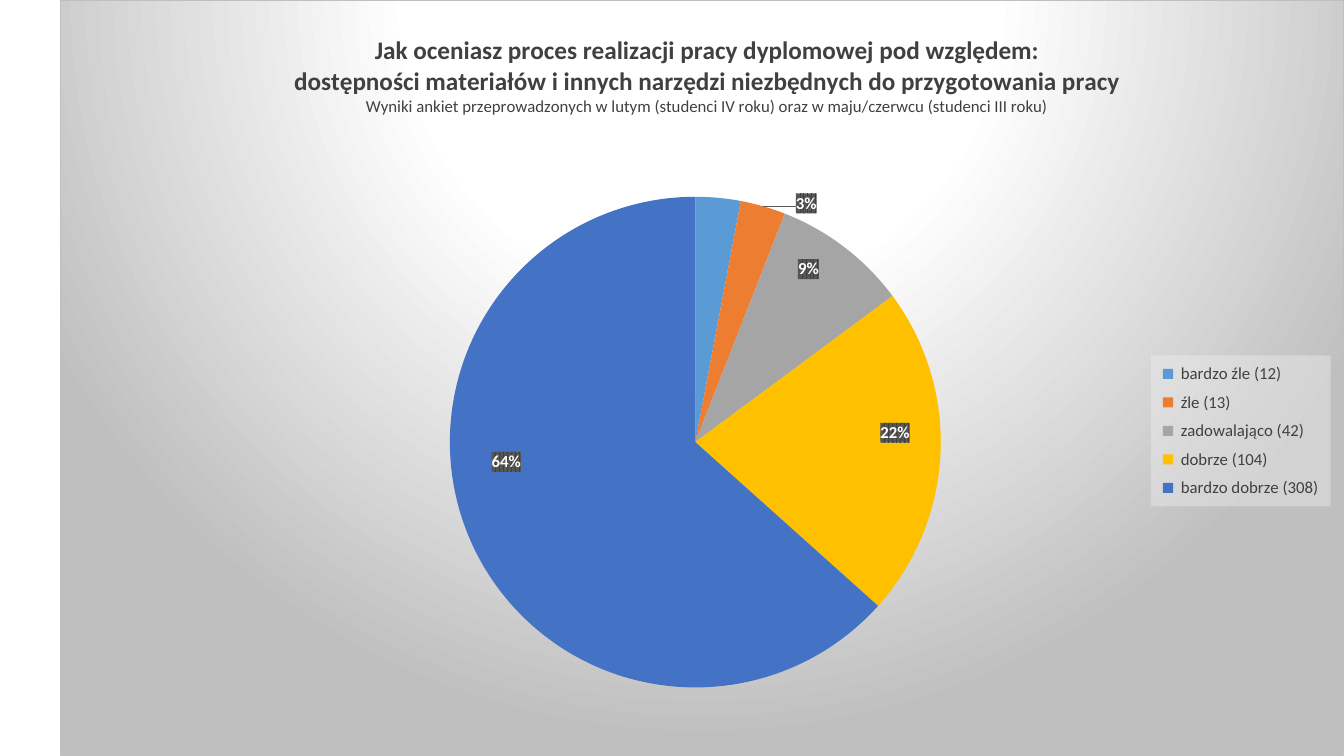
"""Build a slide with a pie chart of survey ratings on thesis work."""
from pptx import Presentation
from pptx import util as u
from pptx.chart import data as cd
from pptx.dml import color as dc
from pptx.enum import chart as ce
from pptx.oxml import parse_xml

TITLE = [
    ("Jak oceniasz proces realizacji pracy dyplomowej pod względem:", "head"),
    ("dostępności materiałów i innych narzędzi niezbędnych do przygotowania pracy", "head"),
    ("Wyniki ankiet przeprowadzonych w lutym (studenci IV roku) "
     "oraz w maju/czerwcu (studenci III roku)", "sub"),
]
RATINGS = [
    (" bardzo źle (12)", 3, "5B9BD5", None),
    (" źle (13)", 3, "ED7D31", (0.06, -0.16)),
    (" zadowalająco (42)", 9, "A5A5A5", (0.03, -0.1)),
    (" dobrze (104)", 22, "FFC000", (0.06, -0.02)),
    (" bardzo dobrze (308)", 64, "4472C4", (-0.06, -0.04)),
]
THEME = {
    "font": "Calibri", "ink": "404040", "edge": "BFBFBF", "light": "FFFFFF",
    "panel": "F2F2F2", "weave": "595959",
    "head": {"size": u.Pt(18), "bold": True},
    "sub": {"size": u.Pt(12), "bold": False},
    "label": {"size": u.Pt(12), "bold": True},
}
SLIDE = (u.Cm(33.87), u.Cm(19.05))
LEFT = u.Cm(1.5)
PLACES = {
    "title": {"x": 0.18, "y": 0.04},
    "plot": {"x": 0.3, "y": 0.26, "w": 0.39, "h": 0.65},
    "legend": {"x": 0.85, "y": 0.47, "w": 0.14, "h": 0.2},
}
NS = ('xmlns:c="http://schemas.openxmlformats.org/drawingml/2006/chart" '
      'xmlns:a="http://schemas.openxmlformats.org/drawingml/2006/main"')


def style(font, form, tint):
    for key, val in {"name": THEME["font"], **form}.items():
        setattr(font, key, val)
    font.color.rgb = dc.RGBColor.from_string(THEME[tint])


def place(spot, inner=False, page=True):
    rows = ['<c:layoutTarget val="inner"/>'] if inner else []
    if page:
        rows += [f'<c:{k}Mode val="edge"/>' for k in "xy"]
    rows += [f'<c:{k} val="{v}"/>' for k, v in spot.items()]
    return parse_xml(f'<c:layout {NS}><c:manualLayout>{"".join(rows)}'
                     '</c:manualLayout></c:layout>')


def shade(fill):
    return parse_xml(f'<c:spPr {NS}>{fill}</c:spPr>')


def paint(tag, tint, inner=""):
    return f'<a:{tag}><a:srgbClr val="{THEME[tint]}">{inner}</a:srgbClr></a:{tag}>'


def frame():
    stops = "".join(
        f'<a:gs pos="{pos}000"><a:srgbClr val="{THEME[tint]}"/></a:gs>'
        for pos, tint in [(0, "light"), (39, "light"), (100, "edge")])
    return shade(
        f'<a:gradFill><a:gsLst>{stops}</a:gsLst><a:path path="circle">'
        '<a:fillToRect l="50000" t="-80000" r="50000" b="180000"/></a:path></a:gradFill>'
        f'<a:ln w="9525">{paint("solidFill", "edge")}</a:ln>')


def add_title(chart):
    box = chart.chart_title.text_frame
    for i, (line, kind) in enumerate(TITLE):
        para = box.add_paragraph() if i else box.paragraphs[0]
        run = para.add_run()
        run.text = line
        style(run.font, THEME[kind], "ink")
    node = box._txBody.getparent()
    for old in node.getparent().findall(node.tag.replace("}tx", "}layout")):
        node.getparent().remove(old)
    node.addnext(place(PLACES["title"]))


def add_labels(plot):
    plot.has_data_labels = True
    tags = plot.data_labels
    tags.number_format, tags.number_format_is_linked = '0"%"', False
    tags.position = ce.XL_LABEL_POSITION.CENTER
    tags.show_value = True
    style(tags.font, THEME["label"], "light")
    weave = ('<a:pattFill prst="pct75">' + paint("fgClr", "ink")
             + paint("bgClr", "weave") + '</a:pattFill>')
    base = tags._element
    base.find("{*}numFmt").addnext(shade(weave))
    line = f'<a:ln w="9525">{paint("solidFill", "weave")}</a:ln>'
    base.append(parse_xml(f'<c:showLeaderLines {NS} val="1"/>'))
    base.append(parse_xml(f'<c:leaderLines {NS}><c:spPr>{line}</c:spPr></c:leaderLines>'))
    for old in base.findall("{*}showLeaderLines")[:-1]:
        base.remove(old)
    common = [n for n in base if n.tag.split("}")[1] not in ("showLeaderLines", "leaderLines")]
    for i, (_, _, _, shift) in enumerate(RATINGS):
        tag = parse_xml(f'<c:dLbl {NS}><c:idx val="{i}"/></c:dLbl>')
        if shift:
            tag.append(place(dict(zip("xy", shift)), page=False))
            for node in common:
                tag.append(parse_xml(node.xml) if hasattr(node, "xml") else node)
        else:
            tag.append(parse_xml(f'<c:delete {NS} val="1"/>'))
        base.insert(i, tag)
    plot.series[0].points[0]._element.find("{*}cat").addprevious(base)


def add_pie(slide):
    data = cd.CategoryChartData()
    data.categories = [row[0] for row in RATINGS]
    data.add_series("Series 1", [row[1] for row in RATINGS])
    chart = slide.shapes.add_chart(
        ce.XL_CHART_TYPE.PIE, LEFT, 0, SLIDE[0] - LEFT, SLIDE[1], data).chart
    style(chart.font, THEME["sub"], "ink")
    add_title(chart)
    plot = chart.plots[0]
    plot.vary_by_categories = True
    for i, row in enumerate(RATINGS):
        form = plot.series[0].points[i].format
        form.fill.solid()
        form.fill.fore_color.rgb = dc.RGBColor.from_string(row[2])
        form.line.fill.background()
    add_labels(plot)
    chart.has_legend = True
    key = chart.legend
    key.position = ce.XL_LEGEND_POSITION.RIGHT
    key.include_in_layout = False
    style(key.font, THEME["sub"], "ink")
    node = key._element
    for old in node.findall("{*}layout"):
        node.remove(old)
    node.find("{*}legendPos").addnext(place(PLACES["legend"]))
    node.find("{*}overlay").addnext(
        shade(paint("solidFill", "panel", '<a:alpha val="39000"/>')))
    root = chart._chartSpace
    area = root.find(".//{*}plotArea")
    for old in area.findall("{*}layout"):
        area.remove(old)
    area.insert(0, place(PLACES["plot"], inner=True))
    root.find("{*}chart").addnext(frame())


def main():
    deck = Presentation()
    deck.slide_width, deck.slide_height = SLIDE
    add_pie(deck.slides.add_slide(deck.slide_layouts[6]))
    deck.save("out.pptx")


if __name__ == "__main__":
    main()
